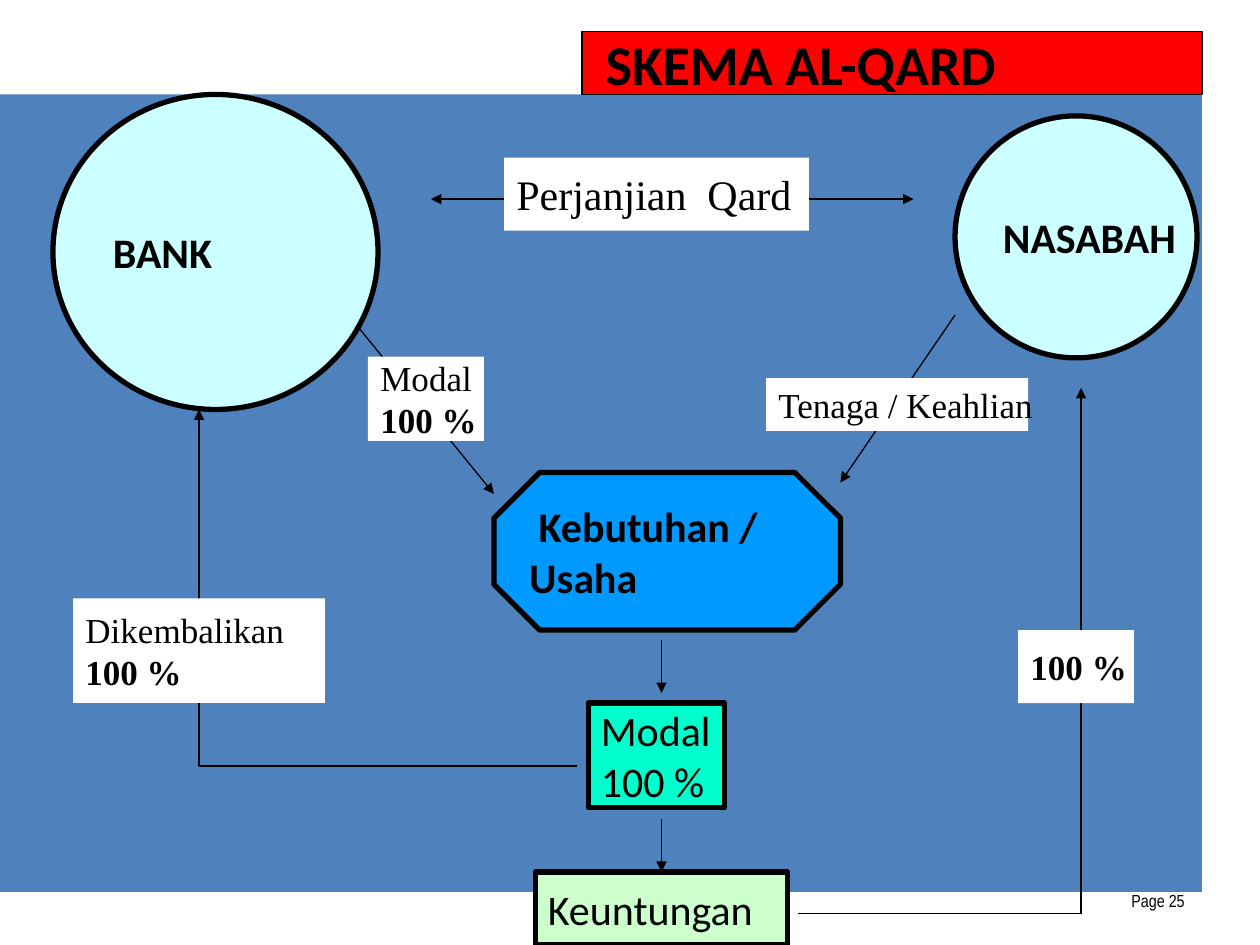
from dataclasses import dataclass

from lxml import etree
from pptx import Presentation
from pptx.dml.color import RGBColor
from pptx.enum import shapes, text
from pptx.oxml.ns import qn
from pptx.util import Inches, Pt

COLORS = {
    "black": "000000",
    "white": "FFFFFF",
    "panel": "4F81BD",
    "title": "FF0000",
    "party": "CCFFFF",
    "need": "0099FF",
    "capital": "00FFCC",
    "profit": "CCFFCC",
}
RECTANGLE = shapes.MSO_SHAPE.RECTANGLE
OVAL = shapes.MSO_SHAPE.OVAL
OCTAGON = shapes.MSO_SHAPE.OCTAGON
SERIF = "Times New Roman"


@dataclass(frozen=True)
class Block:
    at: tuple[float, float, float, float]
    fill: str
    lines: tuple[str, ...] = ()
    kind: shapes.MSO_SHAPE = RECTANGLE
    border: float = 3
    font: str = "Calibri"
    size: float = 24
    bold: tuple[bool, ...] = (False, False)


@dataclass(frozen=True)
class Link:
    start: tuple[float, float]
    end: tuple[float, float]
    head: bool = False
    tail: bool = True


def color(name: str) -> RGBColor:
    return RGBColor.from_string(COLORS[name])


def style(font, name: str, size: float, bold: bool = False) -> None:
    font.name = name
    font.size = Pt(size)
    font.bold = bold
    font.color.rgb = color("black")


def draw_block(page, block: Block):
    box = page.shapes.add_shape(block.kind, *map(Inches, block.at))
    box.shadow.inherit = False
    box.fill.solid()
    box.fill.fore_color.rgb = color(block.fill)
    if block.border:
        box.line.color.rgb = color("black")
        box.line.width = Pt(block.border)
    else:
        box.line.fill.background()
    frame = box.text_frame
    frame.word_wrap = False
    frame.vertical_anchor = text.MSO_ANCHOR.MIDDLE
    for index, (line, bold) in enumerate(zip(block.lines, block.bold)):
        para = frame.add_paragraph() if index else frame.paragraphs[0]
        para.alignment = text.PP_ALIGN.LEFT
        para.text = line
        style(para.font, block.font, block.size, bold)
    return box


def draw_link(page, link: Link) -> None:
    line = page.shapes.add_connector(
        shapes.MSO_CONNECTOR.STRAIGHT, *map(Inches, link.start + link.end)
    )
    line.line.color.rgb = color("black")
    line.line.width = Pt(0.75)
    outline = line.line._get_or_add_ln()
    for tag, shown in (("a:headEnd", link.head), ("a:tailEnd", link.tail)):
        if shown:
            etree.SubElement(outline, qn(tag), type="triangle")
    etree.SubElement(line._element.spPr, qn("a:effectLst"))


def draw_page_number(page) -> None:
    box = page.shapes.add_textbox(*map(Inches, (7.17, 6.95, 2.33, 0.4)))
    box.text_frame.word_wrap = True
    box.text_frame.vertical_anchor = text.MSO_ANCHOR.MIDDLE
    para = box.text_frame.paragraphs[0]
    para.text = "Page 25"
    para.alignment = text.PP_ALIGN.RIGHT
    style(para.font, "Arial Narrow", 10)


def draw_title(page) -> None:
    box = draw_block(page, Block((4.62, 0.25, 4.92, 0.5), "title", border=0.75))
    para = box.text_frame.paragraphs[0]
    para.alignment = text.PP_ALIGN.LEFT
    for words, size in ((" ", 28), ("SKEMA AL-QARD", 32)):
        span = para.add_run()
        span.text = words
        style(span.font, "Calibri", size, True)


def label(at: tuple[float, float, float, float], *lines: str,
          size: float = 20, bold: tuple[bool, ...] = (False, True)) -> Block:
    return Block(at, "white", lines, border=0, font=SERIF, size=size, bold=bold)


PANEL = Block((0, 0.75, 9.54, 6.33), "panel", border=0)
RETURN_TO_BANK = Link((1.58, 6.08), (1.58, 3.25))
NODES = (
    Block((0.42, 0.75, 2.58, 2.5), "party", ("BANK",), OVAL, bold=(True,)),
    Block((7.58, 0.92, 1.92, 1.92), "party", ("NASABAH",), OVAL, bold=(True,)),
    Block((3.92, 3.75, 2.75, 1.25), "need", (" Kebutuhan /", "Usaha"), OCTAGON,
          bold=(True, True)),
    Block((4.67, 5.58, 1.08, 0.83), "capital", ("Modal", "100 %")),
    Block((4.25, 6.92, 2, 0.58), "profit", ("Keuntungan",)),
)
LINKS = (
    Link((2.83, 2.58), (3.92, 3.92)),
    Link((7.58, 2.5), (6.67, 3.83)),
    Link((3.42, 1.58), (7.25, 1.58), head=True),
    Link((5.25, 5.08), (5.25, 5.5)),
    Link((5.25, 6.5), (5.25, 6.92)),
    Link((4.58, 6.08), (1.58, 6.08), tail=False),
    Link((8.58, 7.25), (6.33, 7.25), tail=False),
    Link((8.58, 7.25), (8.58, 3.08)),
)
LABELS = (
    label((4, 1.25, 2.42, 0.58), "Perjanjian  Qard", size=24),
    label((0.58, 4.75, 2, 0.83), "Dikembalikan", "100 %"),
    label((6.08, 3, 2.08, 0.42), "Tenaga / Keahlian"),
    label((2.92, 2.83, 0.92, 0.67), "Modal", "100 %"),
    label((8.08, 5, 0.92, 0.58), "100 %", bold=(True,)),
)


def main() -> None:
    deck = Presentation()
    deck.slide_width, deck.slide_height = Inches(10), Inches(7.5)
    page = deck.slides.add_slide(deck.slide_layouts[6])
    draw_page_number(page)
    draw_block(page, PANEL)
    draw_link(page, RETURN_TO_BANK)
    draw_title(page)
    for node in NODES:
        box = draw_block(page, node)
        if node.kind == OCTAGON:
            box.adjustments[0] = 0.29
    for link in LINKS:
        draw_link(page, link)
    for item in LABELS:
        draw_block(page, item)
    deck.save("out.pptx")


if __name__ == "__main__":
    main()
